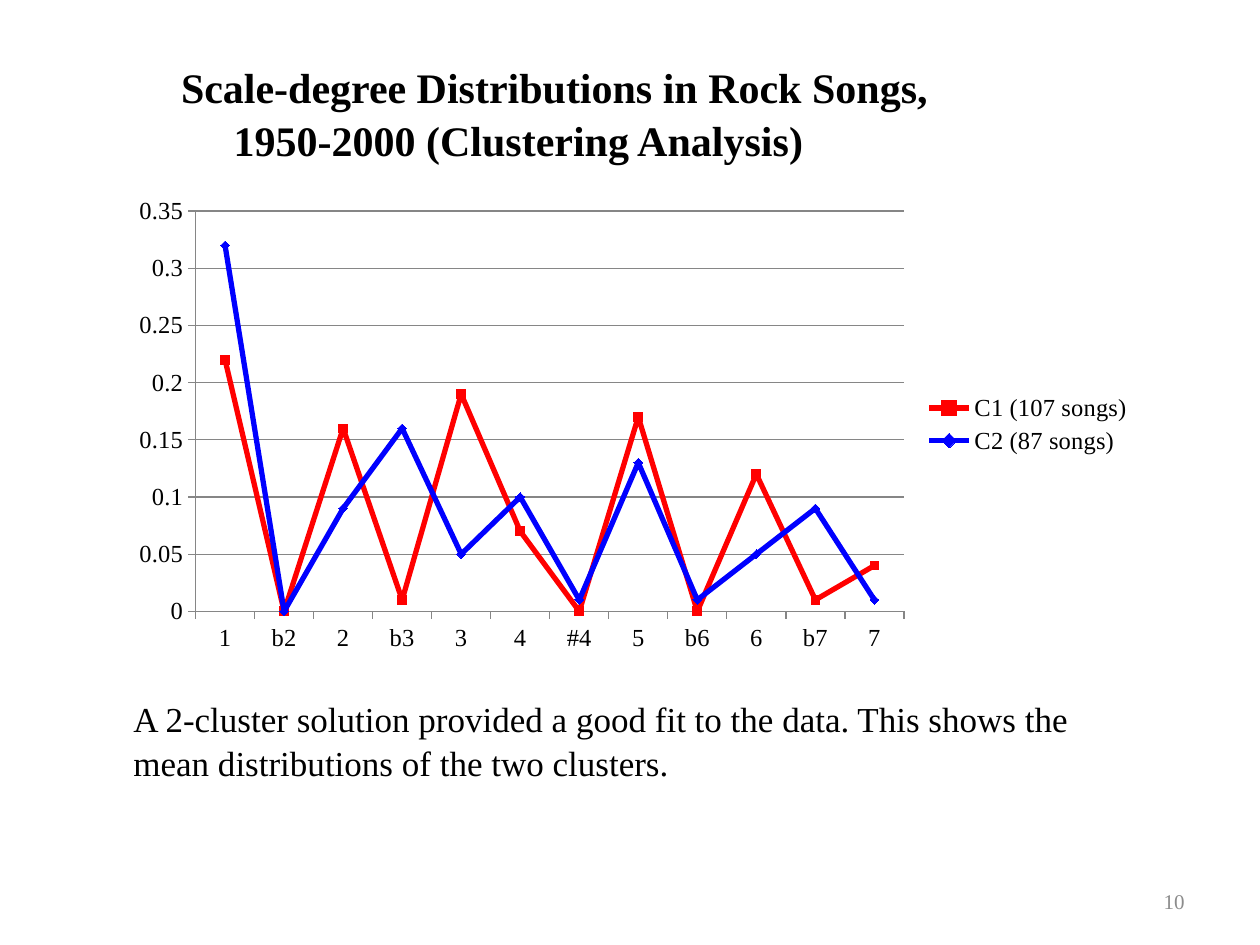
import pptx
import pptx.chart.data
import pptx.dml.color
import pptx.enum.chart
import pptx.enum.text
import pptx.oxml
import pptx.oxml.ns
import pptx.util
from pptx.util import Cm

BLACK = pptx.dml.color.RGBColor(0x00, 0x00, 0x00)
GREY = pptx.dml.color.RGBColor(0x8C, 0x8C, 0x8C)
AXIS_GREY = pptx.dml.color.RGBColor(0x86, 0x86, 0x86)
RED = pptx.dml.color.RGBColor(0xFF, 0x00, 0x00)
BLUE = pptx.dml.color.RGBColor(0x00, 0x00, 0xFF)

Marker = pptx.enum.chart.XL_MARKER_STYLE
Align = pptx.enum.text.PP_ALIGN
Anchor = pptx.enum.text.MSO_ANCHOR

SCALE_DEGREES = ["1", "b2", "2", "b3", "3", "4", "#4", "5", "b6", "6", "b7", "7"]
CLUSTERS = [
    ("C1 (107 songs)", RED, Marker.SQUARE,
     [0.22, 0, 0.16, 0.01, 0.19, 0.07, 0, 0.17, 0, 0.12, 0.01, 0.04]),
    ("C2 (87 songs)", BLUE, Marker.DIAMOND,
     [0.32, 0, 0.09, 0.16, 0.05, 0.1, 0.01, 0.13, 0.01, 0.05, 0.09, 0.01]),
]


class SlideWriter:
    font_name = "Times New Roman"

    def __init__(self, slide):
        self.slide = slide

    def style_font(self, font, size, color=BLACK, bold=False):
        font.name = self.font_name
        font.size = pptx.util.Pt(size)
        font.bold = bold
        font.color.rgb = color

    def text(self, box, lines, size, color=BLACK, bold=False, align=Align.LEFT,
             anchor=Anchor.TOP, wrap=False, spacing=1.05):
        frame = self.slide.shapes.add_textbox(*box).text_frame
        frame.word_wrap = wrap
        frame.vertical_anchor = anchor
        frame.text = "\n".join(lines)
        for paragraph in frame.paragraphs:
            paragraph.alignment = align
            paragraph.line_spacing = spacing
            for run in paragraph.runs:
                self.style_font(run.font, size, color, bold)
        return frame

    def line_chart(self, box, categories, series_rows, size):
        data = pptx.chart.data.CategoryChartData()
        data.categories = categories
        for name, _, _, values in series_rows:
            data.add_series(name, values)
        chart = self.slide.shapes.add_chart(
            pptx.enum.chart.XL_CHART_TYPE.LINE_MARKERS, *box, data).chart
        self.style_font(chart.font, size)
        chart.has_title = False
        chart.has_legend = True
        chart.legend.position = pptx.enum.chart.XL_LEGEND_POSITION.RIGHT
        chart.legend.include_in_layout = False
        self.style_font(chart.legend.font, size)

        for axis in (chart.category_axis, chart.value_axis):
            axis.major_tick_mark = pptx.enum.chart.XL_TICK_MARK.OUTSIDE
            axis.format.line.color.rgb = AXIS_GREY
            axis.format.line.width = pptx.util.Pt(0.75)
            self.style_font(axis.tick_labels.font, size)
        value_axis = chart.value_axis
        value_axis.minimum_scale, value_axis.maximum_scale = 0, 0.35
        value_axis.major_unit = 0.05
        value_axis.tick_labels.number_format = "General"
        value_axis.tick_labels.number_format_is_linked = False
        value_axis.has_major_gridlines = True
        grid = value_axis.major_gridlines.format.line
        grid.color.rgb = AXIS_GREY
        grid.width = pptx.util.Pt(0.75)

        plot = chart.plots[0]
        plot.vary_by_categories = False
        for series, (_, color, marker, _) in zip(plot.series, series_rows):
            series.smooth = False
            series.format.line.color.rgb = color
            series.format.line.width = pptx.util.Pt(3)
            series.marker.style = marker
            series.marker.size = 5
            series.marker.format.fill.solid()
            series.marker.format.fill.fore_color.rgb = color
            series.marker.format.line.color.rgb = color
        return chart


def place_plot(chart, x, y, w, h):
    """Fix the inner plot area, in fractions of the chart's size."""
    area = chart.plots[0]._element.getparent()
    for old in area.findall(pptx.oxml.ns.qn("c:layout")):
        area.remove(old)
    sizes = "".join(f'<c:{key} val="{value}"/>'
                    for key, value in zip("xywh", (x, y, w, h)))
    area.insert(0, pptx.oxml.parse_xml(
        f'<c:layout {pptx.oxml.ns.nsdecls("c")}><c:manualLayout>'
        '<c:layoutTarget val="inner"/><c:xMode val="edge"/><c:yMode val="edge"/>'
        f'{sizes}</c:manualLayout></c:layout>'))


def main():
    deck = pptx.Presentation()
    deck.slide_width, deck.slide_height = Cm(25.4), Cm(19.05)
    writer = SlideWriter(deck.slides.add_slide(deck.slide_layouts[6]))

    distributions = writer.line_chart(
        (Cm(2.39), Cm(3.78), Cm(20.7), Cm(9.55)), SCALE_DEGREES, CLUSTERS, 14)
    place_plot(distributions, 0.075, 0.05, 0.69, 0.845)

    writer.text((Cm(18.21), Cm(17.65), Cm(5.92), Cm(1.02)), ["10"], 12, GREY,
                align=Align.RIGHT, anchor=Anchor.MIDDLE, wrap=True, spacing=1)

    title = writer.text(
        (Cm(3.4), Cm(1.07), Cm(17.37), Cm(3.33)),
        ["Scale-degree Distributions in Rock Songs,",
         "1950-2000 (Clustering Analysis)"], 24, bold=True)
    second_line = title.paragraphs[1]._p.get_or_add_pPr()
    second_line.set("marL", str(Cm(1.06)))
    second_line.set("indent", "0")

    writer.text(
        (Cm(2.44), Cm(13.89), Cm(19.43), Cm(2.74)),
        ["A 2-cluster solution provided a good fit to the data. This shows the",
         "mean distributions of the two clusters."], 20)

    deck.save("out.pptx")


if __name__ == "__main__":
    main()
